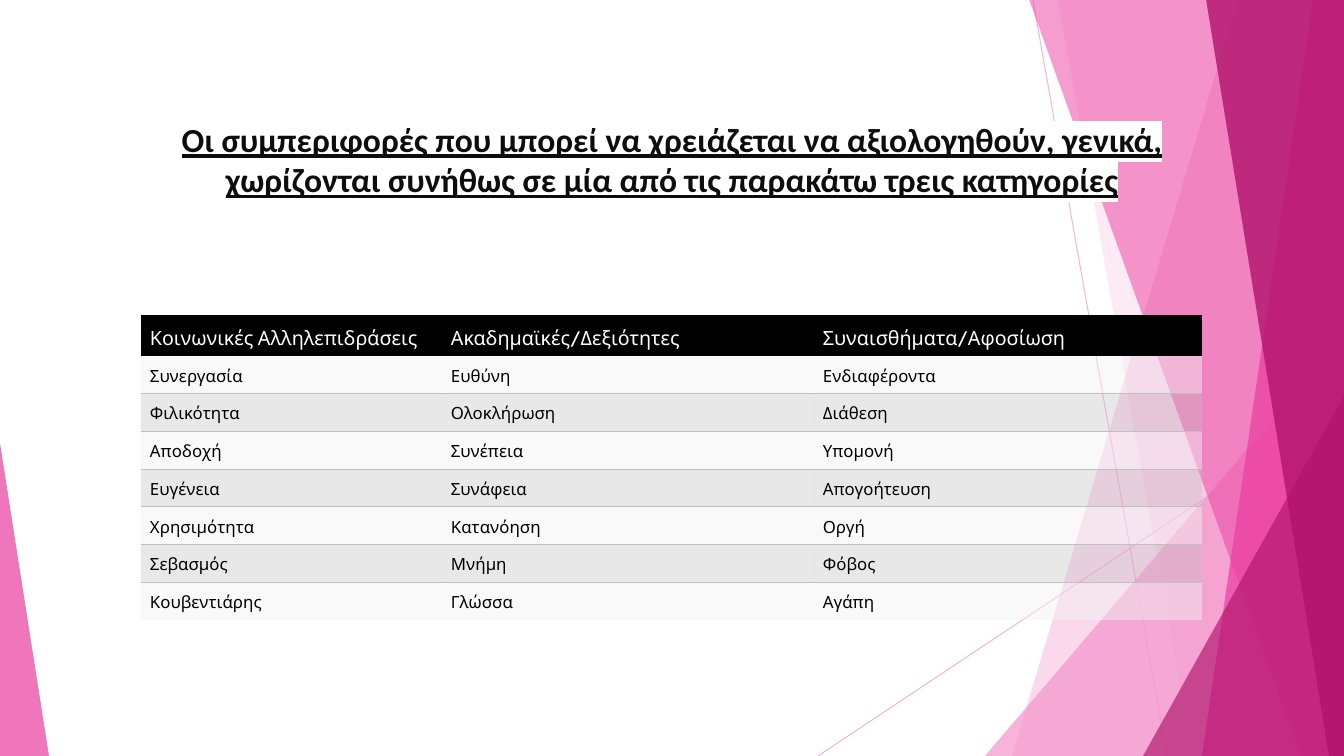
"""Build a slide with a table of three behaviour categories over pink facets."""
from lxml.etree import SubElement
from pptx import Presentation
from pptx.dml.color import RGBColor as RGB
from pptx.enum.shapes import MSO_CONNECTOR as CONN, MSO_SHAPE as SHAPE
from pptx.enum.text import MSO_ANCHOR as ANCHOR, PP_ALIGN as ALIGN
from pptx.oxml.ns import qn
from pptx.util import Pt

PX = 914400 / 100.8
W, H = 1344, 756
COLORS = {
    "pale": "F496CB", "pink": "EB3D9F", "berry": "B2136D",
    "white": "FFFFFF", "black": "000000", "ink": "0D0D0D",
    "light": "F2F2F2", "grey": "BFBFBF",
}


def px(value):
    return round(value * PX)


def paint(fill, element, color, alpha):
    fill.solid()
    fill.fore_color.rgb = RGB.from_string(COLORS[color])
    solid = element.find(".//" + qn("a:solidFill"))
    SubElement(solid[0], qn("a:alpha"), val=str(alpha * 1000))


prs = Presentation()
prs.slide_width, prs.slide_height = px(W), px(H)
s = prs.slides.add_slide(prs.slide_layouts[5])

for ends in [(1033, 0, 1167, H), (W, 406, 818, H)]:
    line = s.shapes.add_connector(CONN.STRAIGHT, *map(px, ends))
    line.line.width = Pt(0.75)
    paint(line.line.fill, line.element, "pale", 70)
    SubElement(line.element.spPr, qn("a:effectLst"))

facets = [
    ("band", (1238, 1012), "pale", 36),
    ("band", (1058, 1192), "pale", 20),
    ("triangle", (985, 336, 359, 420, 1), "pale", 72),
    ("band", (1029, 1301), "pink", 50),
    ("band", (1313, 1202), "pink", 70),
    ("band", (1206, 1329), "berry", 80),
    ("triangle", (1143, 396, 201, 360, 1), "berry", 66),
    ("triangle", (0, 443, 49, 313, 0), "pink", 70),
]
for kind, place, color, alpha in facets:
    if kind == "band":
        top_x, bottom_x = place
        outline = s.shapes.build_freeform(top_x, -1, scale=PX)
        outline.add_line_segments([(W, -1), (W, H), (bottom_x, H)])
        sp = outline.convert_to_shape()
    else:
        *box, apex = place
        sp = s.shapes.add_shape(SHAPE.ISOSCELES_TRIANGLE, *map(px, box))
        sp.adjustments[0] = apex
    paint(sp.fill, sp.element, color, alpha)
    sp.line.fill.background()
    sp.shadow.inherit = False

title = s.shapes.title
s.shapes.element.append(title.element)
title.left, title.top, title.width, title.height = map(px, (160, 114, 1024, 151))
tf = title.text_frame
tf.text = ("Οι συμπεριφορές που μπορεί να χρειάζεται να αξιολογηθούν, γενικά, "
           "χωρίζονται συνήθως σε μία από τις παρακάτω τρεις κατηγορίες")
tf.vertical_anchor = ANCHOR.TOP
p = tf.paragraphs[0]
p.alignment = ALIGN.CENTER
r = p.runs[0]
r.font.size, r.font.name = Pt(24), "Calibri"
r.font.bold = r.font.underline = True
r.font.color.rgb = RGB.from_string(COLORS["ink"])
highlight = SubElement(r.font.fill and title.element.find(".//" + qn("a:rPr")), qn("a:highlight"))
SubElement(highlight, qn("a:srgbClr"), val=COLORS["white"])
title.element.find(".//" + qn("a:rPr")).find(qn("a:solidFill")).addnext(highlight)

rows = [
    ("Κοινωνικές Αλληλεπιδράσεις", "Ακαδημαϊκές/Δεξιότητες", "Συναισθήματα/Αφοσίωση"),
    ("Συνεργασία", "Ευθύνη", "Ενδιαφέροντα"),
    ("Φιλικότητα", "Ολοκλήρωση", "Διάθεση"),
    ("Αποδοχή", "Συνέπεια", "Υπομονή"),
    ("Ευγένεια", "Συνάφεια", "Απογοήτευση"),
    ("Χρησιμότητα", "Κατανόηση", "Οργή"),
    ("Σεβασμός", "Μνήμη", "Φόβος"),
    ("Κουβεντιάρης", "Γλώσσα", "Αγάπη"),
]
widths = (301, 372, 388)
height, header_height = 305, 41
body_height = (height - header_height) / (len(rows) - 1)
frame = s.shapes.add_table(len(rows), len(widths), px(141), px(315), px(sum(widths)), px(height))
table = frame.table
NO_STYLE_NO_GRID = "{2D5ABB26-0587-4C30-8999-92F81FD0307C}"
frame.element.find(".//" + qn("a:tableStyleId")).text = NO_STYLE_NO_GRID
for column, width in zip(table.columns, widths):
    column.width = px(width)

for i, texts in enumerate(rows):
    table.rows[i].height = px(body_height if i else header_height)
    if i == 0:
        look = "black", 100
    else:
        look = ("light", 45) if i % 2 else ("grey", 35)
    for j, text in enumerate(texts):
        cell = table.cell(i, j)
        paint(cell.fill, cell._tc, *look)
        if 0 < i < len(rows) - 1:
            border = SubElement(cell._tc.tcPr, qn("a:lnB" if i % 2 else "a:lnT"), w=str(Pt(1)))
            solid = SubElement(border, qn("a:solidFill"))
            SubElement(solid, qn("a:srgbClr"), val=COLORS["grey"])
            cell._tc.tcPr.insert(0, border)
        cell.margin_left = cell.margin_right = px(9)
        cell.margin_top, cell.margin_bottom = px(10), px(4)
        cell.vertical_anchor = ANCHOR.TOP if i else ANCHOR.MIDDLE
        cell.text_frame.text = text
        font = cell.text_frame.paragraphs[0].runs[0].font
        font.name, font.size = "Cabin", Pt(12 if i else 14)
        font.color.rgb = RGB.from_string(COLORS["black" if i else "white"])

prs.save("out.pptx")
